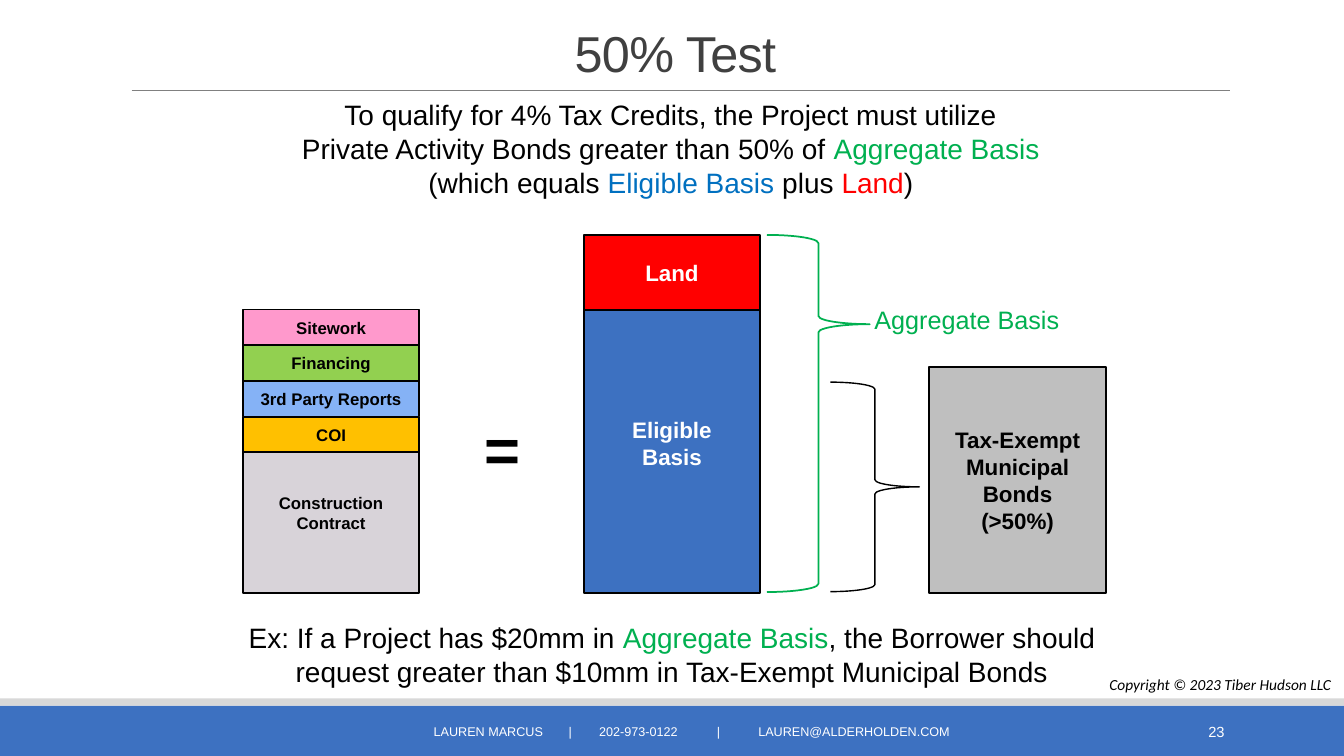
from lxml import etree
from pptx import Presentation
from pptx.dml.color import RGBColor
from pptx.enum.shapes import MSO_CONNECTOR, MSO_SHAPE
from pptx.enum.text import MSO_ANCHOR as Anchor, PP_ALIGN as Align
from pptx.oxml.ns import qn
from pptx.util import Cm, Pt

BLACK = RGBColor(0, 0, 0)
WHITE = RGBColor(255, 255, 255)
TITLE_GREY = RGBColor(0x40, 0x40, 0x40)
RULE_GREY = RGBColor(0x80, 0x80, 0x80)
STRIP_GREY = RGBColor(0xD8, 0xD8, 0xD8)
BOND_GREY = RGBColor(0xBF, 0xBF, 0xBF)
CONTRACT_GREY = RGBColor(0xD8, 0xD3, 0xD9)
BLUE = RGBColor(0x3D, 0x71, 0xC1)
TEXT_BLUE = RGBColor(0x00, 0x70, 0xC0)
REPORT_BLUE = RGBColor(0x85, 0xB2, 0xF6)
GREEN = RGBColor(0x00, 0xB0, 0x50)
FINANCING_GREEN = RGBColor(0x92, 0xD0, 0x50)
RED = RGBColor(0xFF, 0, 0)
PINK = RGBColor(0xFF, 0x99, 0xCC)
AMBER = RGBColor(0xFF, 0xC0, 0)

BLOCK_WIDTH = 4.45
BLOCK_BOTTOM = 14.95
COST_LEFT, BASIS_LEFT, BOND_LEFT = 6.12, 14.71, 23.42
ELIGIBLE_TOP = 7.82
LAND_TOP = 5.92
COST_TOP = 7.8
COST_STEP = 0.9


def write(frame, paragraphs, size, color, align=Align.CENTER, font="Arial",
          bold=False, italic=False):
    for index, pieces in enumerate(paragraphs):
        paragraph = frame.paragraphs[0] if index == 0 else frame.add_paragraph()
        paragraph.alignment = align
        for words, tint in pieces:
            run = paragraph.add_run()
            run.text = words
            run.font.name = font
            run.font.size = Pt(size)
            run.font.bold = bold
            run.font.italic = italic
            run.font.color.rgb = tint or color


def add_text(slide, left, top, width, height, paragraphs, size, color=BLACK,
             anchor=Anchor.TOP, wrap=True, **style):
    box = slide.shapes.add_textbox(Cm(left), Cm(top), Cm(width), Cm(height))
    frame = box.text_frame
    frame.word_wrap = wrap
    frame.vertical_anchor = anchor
    write(frame, paragraphs, size, color, **style)
    return frame


def add_bar(slide, top, height, fill):
    bar = slide.shapes.add_shape(MSO_SHAPE.RECTANGLE, 0, Cm(top), Cm(33.87), Cm(height))
    bar.shadow.inherit = False
    bar.fill.solid()
    bar.fill.fore_color.rgb = fill
    bar.line.fill.background()


def add_block(slide, left, top, bottom, fill, lines, size, color=BLACK,
              side_inset=0.25, lift=0):
    block = slide.shapes.add_shape(MSO_SHAPE.RECTANGLE, Cm(left), Cm(top),
                                   Cm(BLOCK_WIDTH), Cm(bottom - top))
    block.shadow.inherit = False
    block.fill.solid()
    block.fill.fore_color.rgb = fill
    block.line.color.rgb = BLACK
    block.line.width = Pt(1.25)
    frame = block.text_frame
    frame.word_wrap = True
    frame.vertical_anchor = Anchor.MIDDLE
    frame.margin_left = frame.margin_right = Cm(side_inset)
    frame.margin_top = 0
    frame.margin_bottom = Cm(2 * lift)
    write(frame, [[(line, None)] for line in lines], size, color, bold=True)


def add_brace(slide, left, top, width, height, color, weight, point=0.5):
    brace = slide.shapes.add_shape(MSO_SHAPE.RIGHT_BRACE, Cm(left), Cm(top),
                                   Cm(width), Cm(height))
    brace.shadow.inherit = False
    brace.adjustments[0] = 0.08
    brace.adjustments[1] = point
    brace.fill.background()
    brace.line.color.rgb = color
    brace.line.width = Pt(weight)


def add_rule(slide, left, right, height):
    rule = slide.shapes.add_connector(MSO_CONNECTOR.STRAIGHT, Cm(left), Cm(height),
                                      Cm(right), Cm(height))
    rule.line.color.rgb = RULE_GREY
    rule.line.width = Pt(0.5)
    etree.SubElement(rule._element.spPr, qn("a:effectLst"))


def add_title(slide):
    frame = add_text(slide, 3.05, 0.79, 27.94, 1.32, [[("50% Test", None)]], 36,
                     TITLE_GREY, anchor=Anchor.MIDDLE)
    title = frame.paragraphs[0]
    title.line_spacing = 0.85
    title.runs[0].font._element.set("spc", "-50")


def add_contact(slide):
    frame = add_text(slide, 10.24, 17.93, 15.2, 1.02, [], 9, WHITE, anchor=Anchor.MIDDLE)
    frame.margin_left = Cm(0.69)
    tabs = etree.SubElement(frame.paragraphs[0]._p.get_or_add_pPr(), qn("a:tabLst"))
    for stop in (3.4, 4.17, 7.14, 8.18):
        etree.SubElement(tabs, qn("a:tab"), pos=str(int(Cm(stop))), algn="l")
    contact = "\t".join(["LAUREN MARCUS", "|", "202-973-0122", "|",
                         "LAUREN@ALDERHOLDEN.COM"])
    write(frame, [[(contact, None)]], 9, WHITE, align=Align.LEFT)


def add_costs(slide):
    costs = [("Sitework", PINK), ("Financing", FINANCING_GREEN),
             ("3rd Party Reports", REPORT_BLUE), ("COI", AMBER)]
    for index, (cost, fill) in enumerate(costs):
        top = COST_TOP + index * COST_STEP
        add_block(slide, COST_LEFT, top, top + COST_STEP, fill, [cost], 12)
    add_block(slide, COST_LEFT, COST_TOP + len(costs) * COST_STEP, BLOCK_BOTTOM,
              CONTRACT_GREY, ["Construction Contract"], 12, side_inset=0.69, lift=0.25)


def main():
    deck = Presentation()
    deck.slide_width, deck.slide_height = Cm(33.87), Cm(19.05)
    slide = deck.slides.add_slide(deck.slide_layouts[6])

    add_bar(slide, 17.78, 1.27, BLUE)
    add_bar(slide, 17.6, 0.18, STRIP_GREY)
    add_rule(slide, 3.32, 31, 2.27)
    add_title(slide)
    add_text(slide, 5.26, 2.34, 23.29, 2.82, [
        [("To qualify for 4% Tax Credits, the Project must utilize", None)],
        [("Private Activity Bonds greater than 50% of ", None), ("Aggregate Basis", GREEN)],
        [("(which equals ", None), ("Eligible Basis", TEXT_BLUE), (" plus ", None),
         ("Land", RED), (")", None)],
    ], 20)

    add_costs(slide)
    add_text(slide, 10.85, 10.24, 3.61, 2.13, [[("=", None)]], 44, bold=True)
    add_block(slide, BASIS_LEFT, ELIGIBLE_TOP, BLOCK_BOTTOM, BLUE, ["Eligible Basis"],
              16, WHITE, side_inset=0.69, lift=0.23)
    add_block(slide, BASIS_LEFT, LAND_TOP, ELIGIBLE_TOP, RED, ["Land"], 16, WHITE)
    add_block(slide, BOND_LEFT, 9.25, BLOCK_BOTTOM, BOND_GREY,
              ["Tax-Exempt Municipal Bonds", "(>50%)"], 16)
    add_brace(slide, 20.93, 9.63, 2.24, 5.28, BLACK, 1)
    add_brace(slide, 19.33, LAND_TOP, 2.59, 9, GREEN, 1.25, point=0.25)
    add_text(slide, 20.02, 7.54, 8.69, 1.02, [[("Aggregate Basis", None)]], 18, GREEN)

    add_text(slide, 5.72, 15.52, 22.43, 1.96, [[
        ("Ex: If a Project has $20mm in ", None), ("Aggregate Basis", GREEN),
        (", the Borrower should request greater than $10mm in "
         "Tax-Exempt Municipal Bonds", None),
    ]], 20)
    add_text(slide, 27.71, 16.89, 6.15, 0.74,
             [[("Copyright © 2023 Tiber Hudson LLC", None)]], 11, wrap=False,
             align=Align.LEFT, font="Calibri", italic=True)
    add_contact(slide)
    add_text(slide, 27.48, 17.93, 3.63, 1.02, [[("23", None)]], 10.5, WHITE,
             anchor=Anchor.MIDDLE, align=Align.RIGHT)
    deck.save("out.pptx")


if __name__ == "__main__":
    main()
